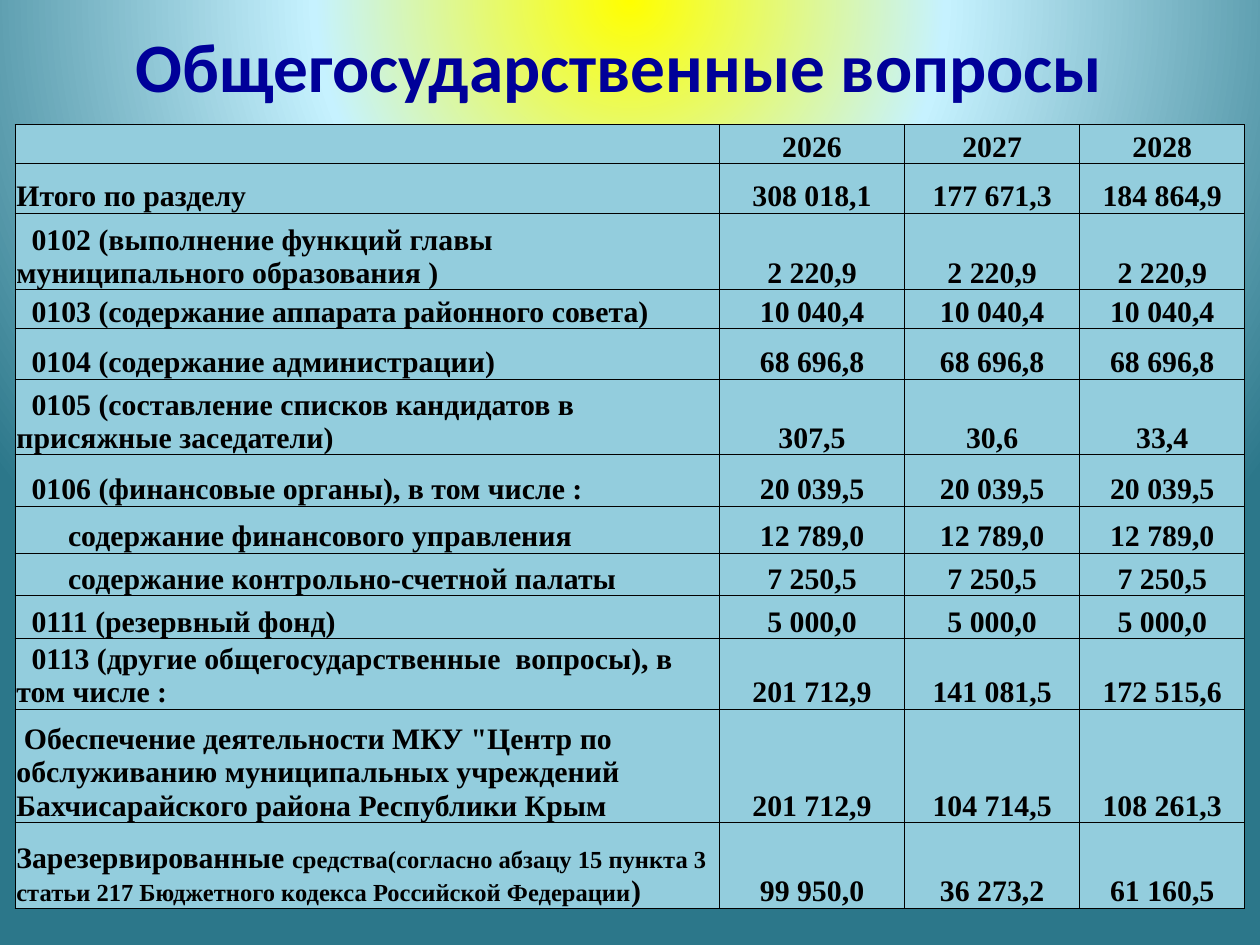
from dataclasses import dataclass

from lxml import etree
from pptx import Presentation
from pptx.dml.color import RGBColor
from pptx.enum.text import MSO_ANCHOR, PP_ALIGN
from pptx.oxml import parse_xml
from pptx.oxml.ns import qn
from pptx.util import Inches, Pt

LEFT, CENTER = PP_ALIGN.LEFT, PP_ALIGN.CENTER
MIDDLE, BOTTOM = MSO_ANCHOR.MIDDLE, MSO_ANCHOR.BOTTOM
TITLE_ONLY = 5
NS_A = "http://schemas.openxmlformats.org/drawingml/2006/main"


@dataclass(frozen=True)
class Theme:
    """Colours, fonts and type sizes of the slide."""
    title_font: str = "Calibri"
    table_font: str = "Times New Roman"
    title_color: str = "000099"
    text_color: str = "000000"
    cell_fill: str = "93CDDD"
    border_color: str = "000000"
    glow: tuple = ((0, "FFFF00"), (40, "C6F2FF"), (100, "2C778A"))
    title_size: float = 39.6
    table_size: float = 17
    small_size: float = 14
    border_width: float = 0.5


THEME = Theme()
COLUMNS = (5.59, 1.47, 1.39, 1.31)
SECTION, ITEM, ENTRY = 0.12, 0.41, 0.06

# Each row: height, first-line indent, text runs of the label, yearly values.
ROWS = (
    (0.31, 0, (), ("2026", "2027", "2028")),
    (0.39, 0, ("Итого по разделу",), ("308 018,1", "177 671,3", "184 864,9")),
    (0.61, SECTION, ("0102 (выполнение функций главы  муниципального образования )",),
     ("2 220,9",) * 3),
    (0.31, SECTION, ("0103 (содержание аппарата районного совета)",), ("10 040,4",) * 3),
    (0.4, SECTION, ("0104 (содержание администрации)",), ("68 696,8",) * 3),
    (0.6, SECTION, ("0105 (составление списков кандидатов в присяжные заседатели)",),
     ("307,5", "30,6", "33,4")),
    (0.41, SECTION, ("0106 (финансовые органы), в том числе :",), ("20 039,5",) * 3),
    (0.37, ITEM, ("содержание финансового управления",), ("12 789,0",) * 3),
    (0.34, ITEM, ("содержание контрольно-счетной палаты",), ("7 250,5",) * 3),
    (0.34, SECTION, ("0111 (резервный фонд)",), ("5 000,0",) * 3),
    (0.56, SECTION, ("0113 (другие общегосударственные  вопросы), в том числе :",),
     ("201 712,9", "141 081,5", "172 515,6")),
    (0.9, ENTRY, ('Обеспечение деятельности МКУ "Центр по обслуживанию муниципальных '
                  'учреждений Бахчисарайского района Республики Крым',),
     ("201 712,9", "104 714,5", "108 261,3")),
    (0.68, 0, ("Зарезервированные ",
               "средства(согласно абзацу 15 пункта 3 статьи 217 Бюджетного кодекса "
               "Российской Федерации", ")"),
     ("99 950,0", "36 273,2", "61 160,5")),
)


def format_run(r, font, size, color):
    """Set the bold typeface, size and colour of a run."""
    r.font.name, r.font.size, r.font.bold = font, Pt(size), True
    r.font.color.rgb = RGBColor.from_string(color)


def paint_background(s):
    """Fill the slide with a radial gradient centred above its top edge."""
    s.background.fill.gradient()
    old = s.element.find(".//" + qn("a:gradFill"))
    stops = "".join(f'<a:gs pos="{pos * 1000}"><a:srgbClr val="{color}"/></a:gs>'
                    for pos, color in THEME.glow)
    old.getparent().replace(old, parse_xml(
        f'<a:gradFill xmlns:a="{NS_A}" rotWithShape="1"><a:gsLst>{stops}</a:gsLst>'
        '<a:path path="circle"><a:fillToRect l="50000" t="-80000" r="50000" b="180000"/>'
        '</a:path></a:gradFill>'))


def add_title(s, text, left, top, width, height):
    """Place the title placeholder in the given box."""
    sp = s.shapes.title
    sp.left, sp.top, sp.width, sp.height = left, top, width, height
    tf = sp.text_frame
    tf.text = text
    tf.word_wrap, tf.vertical_anchor = True, MIDDLE
    tf.margin_left = tf.margin_right = tf.margin_top = tf.margin_bottom = 0
    p = tf.paragraphs[0]
    p.alignment = CENTER
    format_run(p.runs[0], THEME.title_font, THEME.title_size, THEME.title_color)


def style_cell(cell):
    """Give a cell its borders, fill, margins and anchor."""
    tc_pr = cell._tc.get_or_add_tcPr()
    for side in ("lnL", "lnR", "lnT", "lnB"):
        ln = etree.SubElement(tc_pr, qn(f"a:{side}"), w=str(Pt(THEME.border_width)))
        fill = etree.SubElement(ln, qn("a:solidFill"))
        etree.SubElement(fill, qn("a:srgbClr"), val=THEME.border_color)
    cell.fill.solid()
    cell.fill.fore_color.rgb = RGBColor.from_string(THEME.cell_fill)
    cell.margin_left = cell.margin_right = cell.margin_top = Inches(0.01)
    cell.margin_bottom = 0
    cell.vertical_anchor = BOTTOM


def write_cell(cell, parts, align, indent=0):
    """Write the text runs of a cell, the second one in small type."""
    style_cell(cell)
    p = cell.text_frame.paragraphs[0]
    p.alignment = align
    if indent:
        p._p.get_or_add_pPr().set("indent", str(Inches(indent)))
    for i, text in enumerate(parts):
        r = p.add_run()
        r.text = text
        size = THEME.small_size if i == 1 else THEME.table_size
        format_run(r, THEME.table_font, size, THEME.text_color)
    if not parts:
        etree.SubElement(p._p, qn("a:endParaRPr"), sz=str(int(THEME.table_size * 100)))


def add_budget_table(s, left, top, width, height):
    """Place the table of spending by section and year."""
    table = s.shapes.add_table(len(ROWS), len(COLUMNS), left, top, width, height).table
    table.first_row = table.horz_banding = False
    for column, w in zip(table.columns, COLUMNS):
        column.width = Inches(w)
    for i, (h, indent, label, values) in enumerate(ROWS):
        table.rows[i].height = Inches(h)
        write_cell(table.cell(i, 0), label, LEFT, indent)
        for j, value in enumerate(values, start=1):
            write_cell(table.cell(i, j), (value,), CENTER)


def main():
    """Build and save the slide."""
    prs = Presentation()
    prs.slide_width, prs.slide_height = Inches(10), Inches(7.5)
    s = prs.slides.add_slide(prs.slide_layouts[TITLE_ONLY])
    paint_background(s)
    add_title(s, "Общегосударственные вопросы",
              Inches(0.5), Inches(0.24), Inches(8.83), Inches(0.55))
    add_budget_table(s, Inches(0.12), Inches(0.99), Inches(9.76), Inches(6.22))
    prs.save("out.pptx")


if __name__ == "__main__":
    main()
